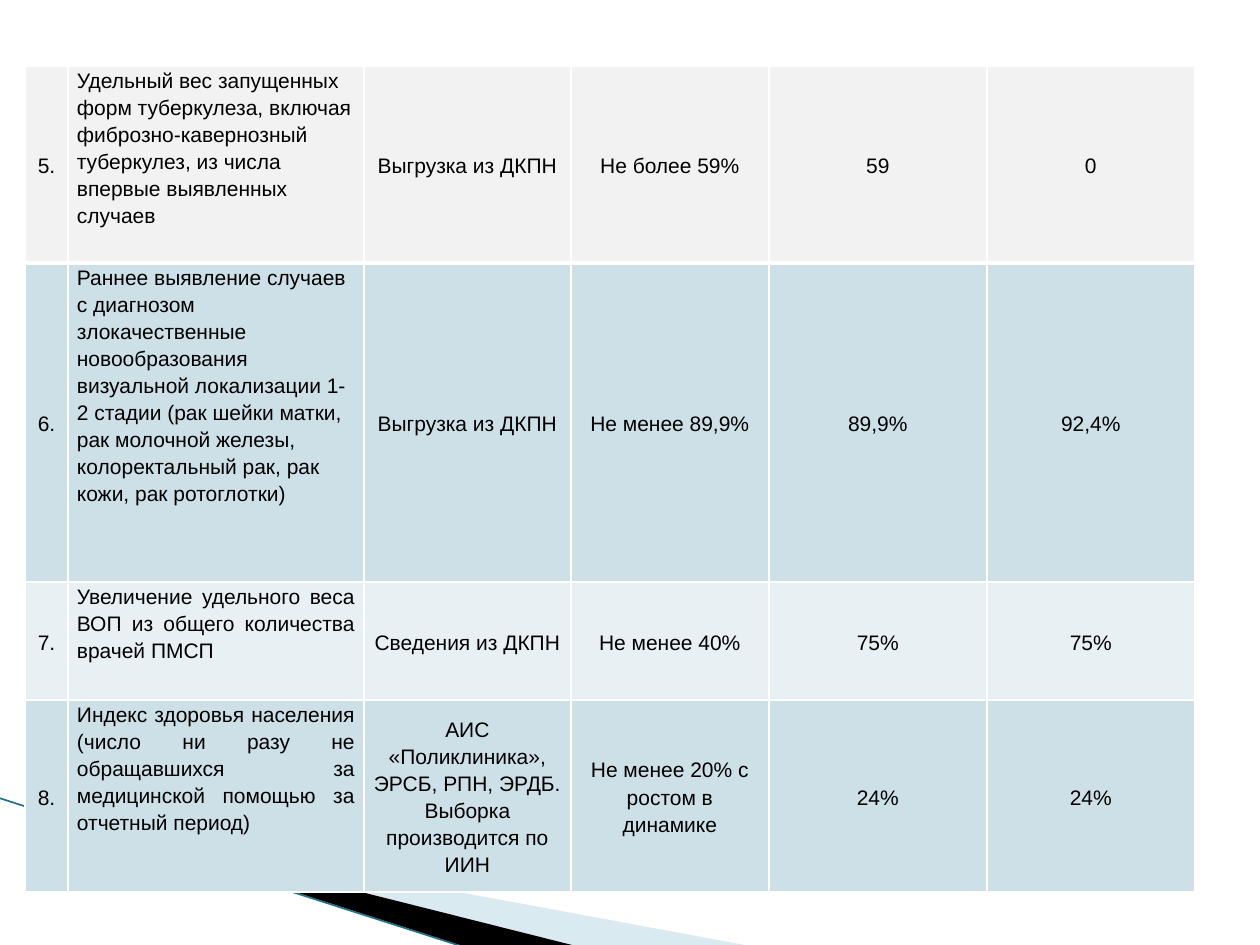
from lxml.etree import SubElement
from pptx import Presentation
from pptx.dml.color import RGBColor
from pptx.enum.shapes import MSO_CONNECTOR
from pptx.enum.text import MSO_ANCHOR, PP_ALIGN
from pptx.oxml import parse_xml
from pptx.oxml.ns import nsdecls, qn
from pptx.util import Pt

PX = 914400 // 126
COLORS = {
    "black": "000000",
    "white": "FFFFFF",
    "pale_blue": "A0CBDC",
    "teal": "1F7187",
    "gray_row": "F2F2F2",
    "blue_row": "CDE0E8",
    "light_row": "E8F0F4",
}
COLUMN_WIDTHS = [43, 296, 207, 198, 218, 208]
ROWS = [
    (197, "gray_row", PP_ALIGN.LEFT, [
        "5.",
        "Удельный вес запущенных форм туберкулеза, включая фиброзно-кавернозный "
        "туберкулез, из числа впервые выявленных случаев",
        "Выгрузка из ДКПН", "Не более 59%", "59", "0"]),
    (319, "blue_row", PP_ALIGN.LEFT, [
        "6.",
        "Раннее выявление случаев с диагнозом злокачественные новообразования "
        "визуальной локализации 1-2 стадии (рак шейки матки, рак молочной железы, "
        "колоректальный рак, рак кожи, рак ротоглотки)",
        "Выгрузка из ДКПН", "Не менее 89,9%", "89,9%", "92,4%"]),
    (118, "light_row", PP_ALIGN.JUSTIFY, [
        "7.",
        "Увеличение удельного веса ВОП из общего количества врачей ПМСП",
        "Сведения из ДКПН", "Не менее 40%", "75%", "75%"]),
    (192, "blue_row", PP_ALIGN.JUSTIFY, [
        "8.",
        "Индекс здоровья населения (число ни разу не обращавшихся за медицинской "
        "помощью за отчетный период)",
        "АИС «Поликлиника», ЭРСБ, РПН, ЭРДБ. Выборка производится по ИИН",
        "Не менее 20% с ростом в динамике", "24%", "24%"]),
]


def color(name):
    return RGBColor.from_string(COLORS[name])


def add_wedge(slide, points, fill, opacity=100):
    builder = slide.shapes.build_freeform(*points[0], scale=PX)
    builder.add_line_segments(points[1:], close=True)
    shape = builder.convert_to_shape()
    shape.shadow.inherit = False
    shape.fill.solid()
    shape.fill.fore_color.rgb = color(fill)
    shape.line.fill.background()
    if opacity < 100:
        fill_color = shape.fill._xPr.find(".//" + qn("a:srgbClr"))
        SubElement(fill_color, qn("a:alpha"), val=str(opacity * 1000))


def add_line(slide, start, end, stroke):
    ends = [value * PX for value in start + end]
    connector = slide.shapes.add_connector(MSO_CONNECTOR.STRAIGHT, *ends)
    connector.line.color.rgb = color(stroke)
    connector.line.width = Pt(0.95)
    SubElement(connector._element.spPr, qn("a:effectLst"))


def set_borders(cell, top, bottom):
    properties = cell._tc.get_or_add_tcPr()
    widths = {"lnL": 1, "lnR": 1, "lnT": top, "lnB": bottom}
    for position, (side, width) in enumerate(widths.items()):
        properties.insert(position, parse_xml(
            f'<a:{side} {nsdecls("a")} w="{Pt(width)}"><a:solidFill>'
            f'<a:srgbClr val="{COLORS["white"]}"/></a:solidFill></a:{side}>'))


def fill_cell(cell, text, fill, alignment, anchor):
    cell.fill.solid()
    cell.fill.fore_color.rgb = color(fill)
    cell.margin_left = cell.margin_right = 9 * PX
    cell.margin_top = cell.margin_bottom = 0
    cell.vertical_anchor = anchor
    paragraph = cell.text_frame.paragraphs[0]
    paragraph.alignment = alignment
    paragraph.line_spacing = 1.15
    run = paragraph.add_run()
    run.text = text
    run.font.name = "Arial"
    run.font.size = Pt(12)
    run.font.color.rgb = color("black")


def add_indicator_table(slide, left, top):
    width = sum(COLUMN_WIDTHS)
    height = sum(row[0] for row in ROWS)
    table = slide.shapes.add_table(
        len(ROWS), len(COLUMN_WIDTHS),
        left * PX, top * PX, width * PX, height * PX).table
    table.first_row = False
    table.horz_banding = False
    for column, column_width in zip(table.columns, COLUMN_WIDTHS):
        column.width = column_width * PX
    for row_index, (row_height, fill, name_alignment, texts) in enumerate(ROWS):
        table.rows[row_index].height = row_height * PX
        for column_index, text in enumerate(texts):
            cell = table.cell(row_index, column_index)
            is_name = column_index == 1
            fill_cell(
                cell, text, fill,
                name_alignment if is_name else PP_ALIGN.CENTER,
                MSO_ANCHOR.TOP if is_name else MSO_ANCHOR.MIDDLE)
            set_borders(
                cell,
                top=3 if row_index == 1 else 1,
                bottom=3 if row_index == 0 else 1)


def main():
    presentation = Presentation()
    presentation.slide_width = 1260 * PX
    presentation.slide_height = 945 * PX
    slide = presentation.slides.add_slide(presentation.slide_layouts[6])
    add_wedge(slide, [(69, 820), (750, 946), (575, 946), (69, 819)], "pale_blue", 40)
    add_wedge(slide, [(67, 818), (576, 946), (469, 948), (68, 819)], "black")
    add_line(slide, (-1, 798), (467, 948), "teal")
    add_indicator_table(slide, 25, 66)
    presentation.save("out.pptx")


if __name__ == "__main__":
    main()
